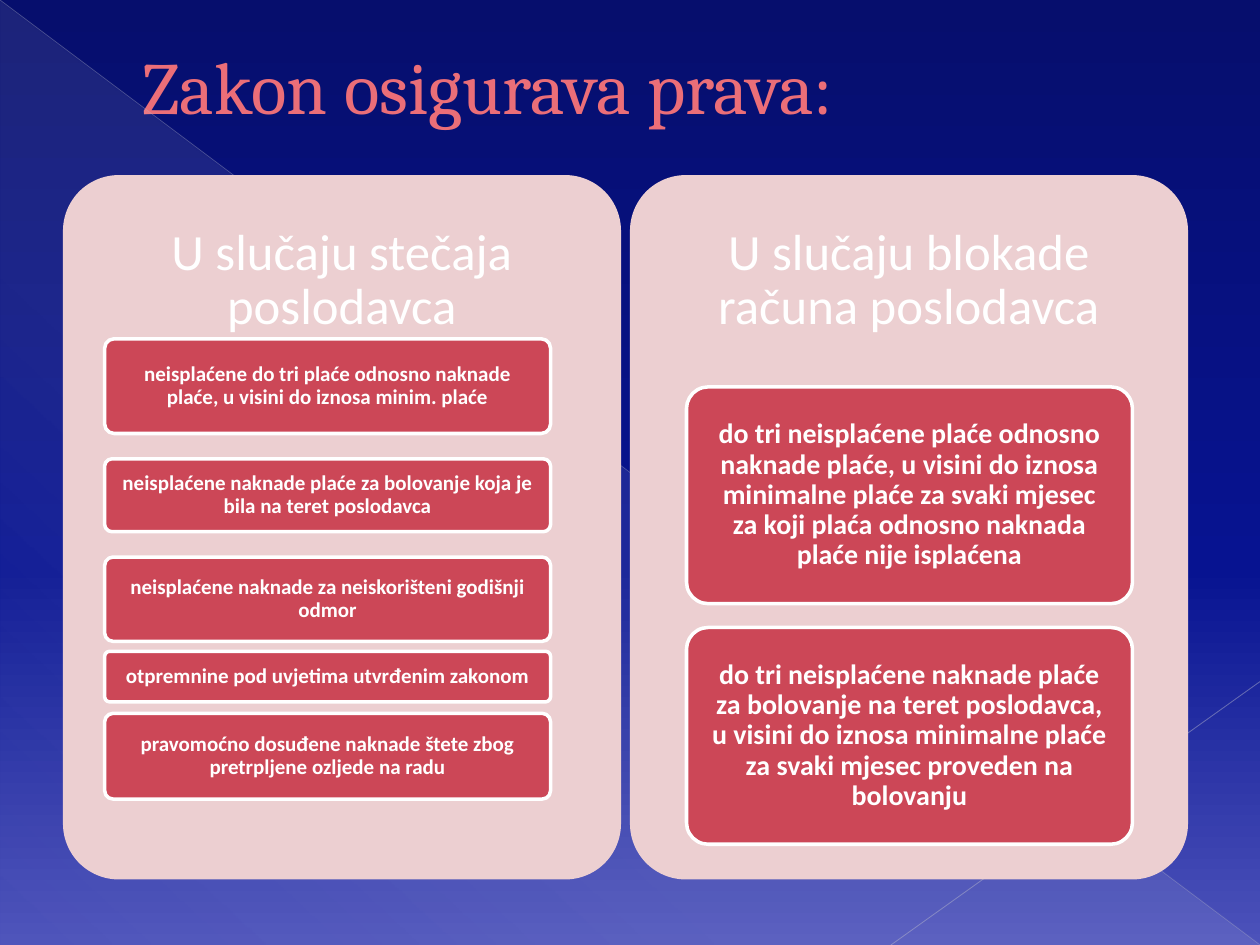
from dataclasses import dataclass

from lxml import etree
from pptx import Presentation
from pptx.dml.color import RGBColor
from pptx.enum import shapes, text
from pptx.oxml.ns import qn
from pptx.util import Cm, Pt


@dataclass(frozen=True)
class Theme:
    title: str = "EB6E78"
    title_outline: str = "8D313C"
    panel: str = "ECCFD1"
    card: str = "CC4757"
    light: str = "FFFFFF"
    title_font: str = "Cambria"
    body_font: str = "Calibri"
    title_size: float = 42
    heading_size: float = 29
    # (position %, colour, opacity %)
    backdrop: tuple = ((0, "060E6D", 100), (60, "071391", 100), (100, "4C52BA", 100))
    sheen: tuple = ((0, "FFFFFF", 10), (70, "FFFFFF", 8), (100, "FFFFFF", 1))


THEME = Theme()
PAGE = (0, 0, 25.4, 19.05)
PANEL_TOP, PANEL_W, PANEL_H = 3.53, 11.25, 14.2
CARD_W = 8.99

# Cards are (top within the panel, height, wording), in cm.
PANELS = [
    dict(left=1.27, heading="U slučaju stečaja poslodavca", indent=0.84, size=12, inset=0.23, cards=[
        (3.3, 1.91, "neisplaćene do tri plaće odnosno naknade plaće, u visini do iznosa minim. plaće"),
        (5.72, 1.47, "neisplaćene naknade plaće za bolovanje koja je bila na teret poslodavca"),
        (7.7, 1.7, "neisplaćene naknade za neiskorišteni godišnji odmor"),
        (9.6, 1.02, "otpremnine pod uvjetima utvrđenim zakonom"),
        (10.85, 1.73, "pravomoćno dosuđene naknade štete zbog pretrpljene ozljede na radu"),
    ]),
    dict(left=12.7, heading="U slučaju blokade računa poslodavca", indent=1.14, size=16, inset=0.3, cards=[
        (4.27, 4.37, "do tri neisplaćene plaće odnosno naknade plaće, u visini do iznosa minimalne "
                     "plaće za svaki mjesec za koji plaća odnosno naknada plaće nije isplaćena"),
        (9.12, 4.37, "do tri neisplaćene naknade plaće za bolovanje na teret poslodavca, u visini do "
                     "iznosa minimalne plaće za svaki mjesec proveden na bolovanju"),
    ]),
]


def cm(*lengths):
    return [Cm(n) for n in lengths]


def rgb(code):
    return RGBColor.from_string(code)


def add_alpha(color, opacity):
    etree.SubElement(color, qn("a:alpha"), val=str(opacity * 1000))


def set_gradient(fill, owner, stops, angle):
    """Fill with any number of stops; angle is clockwise."""
    fill.gradient()
    fill.gradient_angle = 360 - angle
    gs_list = owner.find(".//" + qn("a:gsLst"))
    for old in list(gs_list):
        gs_list.remove(old)
    for position, code, opacity in stops:
        gs = etree.SubElement(gs_list, qn("a:gs"), pos=str(position * 1000))
        color = etree.SubElement(gs, qn("a:srgbClr"), val=code)
        if opacity < 100:
            add_alpha(color, opacity)


def add_shape(slide, kind, box):
    sp = slide.shapes.add_shape(kind, *cm(*box))
    sp.shadow.inherit = False
    sp.line.fill.background()
    return sp


def add_round_rect(slide, box, color):
    sp = add_shape(slide, shapes.MSO_SHAPE.ROUNDED_RECTANGLE, box)
    sp.adjustments[0] = 0.1
    sp.fill.solid()
    sp.fill.fore_color.rgb = rgb(color)
    return sp


def set_centred_text(sp, words, size, bold, inset_x, inset_y):
    tf = sp.text_frame
    tf.word_wrap = True
    tf.vertical_anchor = text.MSO_ANCHOR.MIDDLE
    tf.margin_left = tf.margin_right = Cm(inset_x)
    tf.margin_top = tf.margin_bottom = Cm(inset_y)
    p = tf.paragraphs[0]
    p.text = words
    p.alignment = text.PP_ALIGN.CENTER
    p.line_spacing = 0.9
    p.font.name, p.font.size, p.font.bold = THEME.body_font, Pt(size), bold
    p.font.color.rgb = rgb(THEME.light)


def add_thin_line(slide, ends, color, width, opacity):
    line = slide.shapes.add_connector(shapes.MSO_CONNECTOR.STRAIGHT, *cm(*ends))
    line.line.color.rgb = rgb(color)
    line.line.width = Pt(width)
    properties = line._element.spPr
    add_alpha(properties.find(".//" + qn("a:srgbClr")), opacity)
    etree.SubElement(properties, qn("a:effectLst"))


def add_backdrop(slide, box):
    left, top, width, height = box
    right, bottom = left + width, top + height
    set_gradient(slide.background.fill, slide._element, THEME.backdrop, 90)
    sheen = add_shape(slide, shapes.MSO_SHAPE.RIGHT_TRIANGLE, box)
    set_gradient(sheen.fill, sheen._element, THEME.sheen, 133)
    add_thin_line(slide, (left, top, right, bottom), "B1B2C7", 0.39, 35)
    add_thin_line(slide, (right, bottom - 5.31, right - 7.44, bottom), "BABACD", 0.47, 45)


def add_title(slide, words, box):
    title = slide.shapes.title
    title.left, title.top, title.width, title.height = cm(*box)
    tf = title.text_frame
    tf.vertical_anchor = text.MSO_ANCHOR.MIDDLE
    tf.margin_left = Cm(1.6)
    p = tf.paragraphs[0]
    p.alignment = text.PP_ALIGN.LEFT
    r = p.add_run()
    r.text = words
    r.font.name, r.font.size = THEME.title_font, Pt(THEME.title_size)
    r.font.color.rgb = rgb(THEME.title)
    outline = etree.Element(qn("a:ln"), w=str(Pt(0.5)))
    fill = etree.SubElement(outline, qn("a:solidFill"))
    etree.SubElement(fill, qn("a:srgbClr"), val=THEME.title_outline)
    r._r.get_or_add_rPr().insert(0, outline)


def add_panel(slide, box, heading, indent, size, inset, cards):
    left, top, width, _ = box
    add_round_rect(slide, box, THEME.panel)
    label = slide.shapes.add_textbox(*cm(left + 0.13, top + 0.13, width - 0.26, 4.01))
    set_centred_text(label, heading, THEME.heading_size, False, 1.52, 0.58)
    for offset, height, words in cards:
        card = add_round_rect(slide, (left + indent, top + offset, CARD_W, height), THEME.card)
        card.line.color.rgb = rgb(THEME.light)
        card.line.width = Pt(2)
        set_centred_text(card, words, size, True, inset, inset)


def main():
    prs = Presentation()
    prs.slide_width, prs.slide_height = cm(*PAGE[2:])
    slide = prs.slides.add_slide(prs.slide_layouts[5])
    add_backdrop(slide, PAGE)
    add_title(slide, "Zakon osigurava prava:", (1.27, 0.33, 22.86, 2.77))
    for panel in PANELS:
        content = dict(panel)
        add_panel(slide, (content.pop("left"), PANEL_TOP, PANEL_W, PANEL_H), **content)
    prs.save("out.pptx")


if __name__ == "__main__":
    main()
